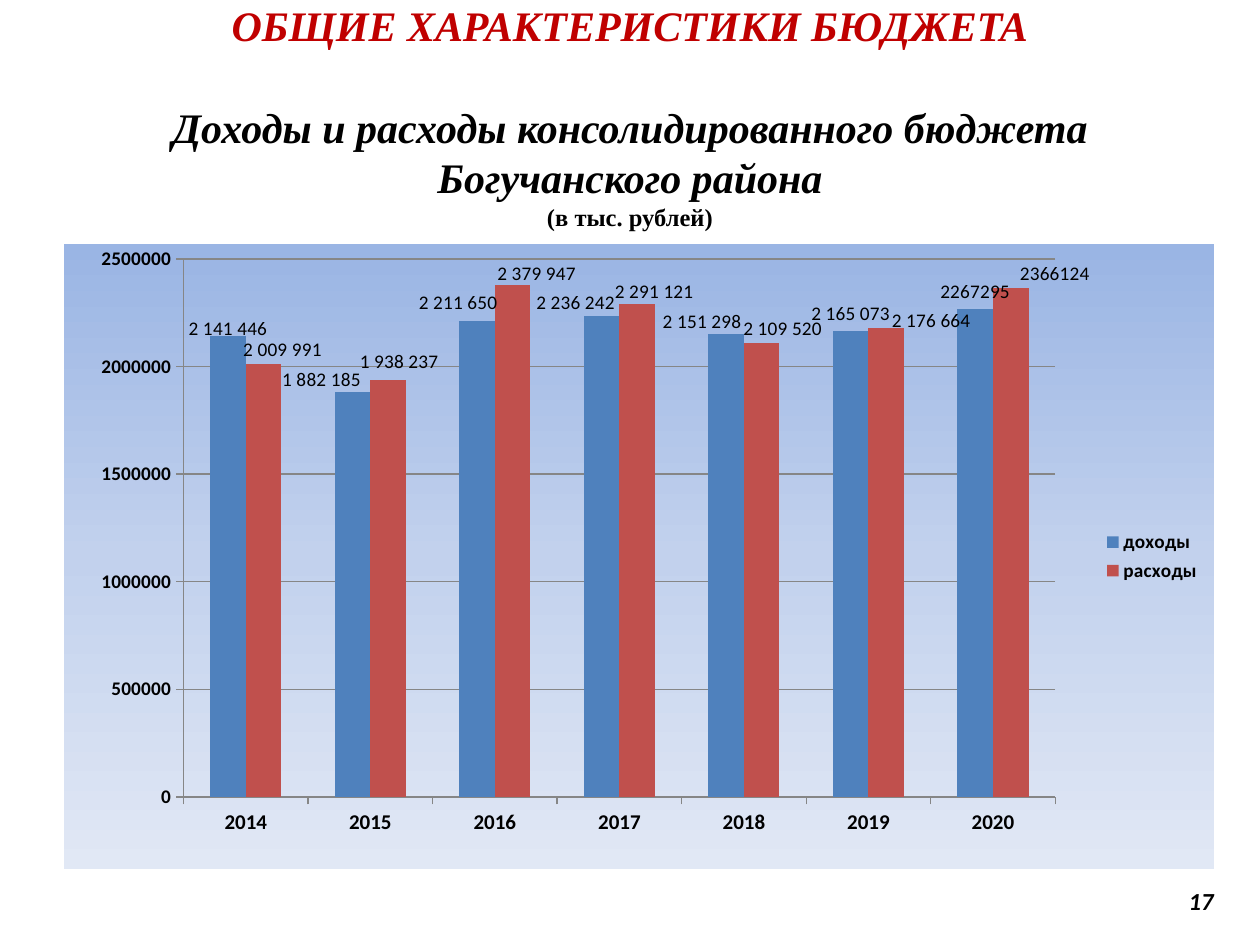
from lxml import etree
from pptx import Presentation
from pptx import util as u
from pptx.chart.data import CategoryChartData
from pptx.dml.color import RGBColor
from pptx.enum import chart as ch, text as tx
from pptx.oxml import parse_xml
from pptx.oxml.ns import nsdecls, qn

PX_PER_INCH = 126
YEARS = [str(year) for year in range(2014, 2021)]
# name, colour, values, label shifts in px
BUDGET = [
    ("доходы", "4F81BD",
     [2141446, 1882185, 2211650, 2236242, 2151298, 2165073, 2267295],
     [(0, 10), (-31, 5), (-19, -1), (-26, 4), (-24, 5), (0, 0), (0, 0)]),
    ("расходы", "C0504D",
     [2009991, 1938237, 2379947, 2291121, 2109520, 2176664, 2366124],
     [(19, 2), (11, -1), (24, 6), (17, 5), (21, 3), (45, 9), (44, 3)]),
]


def px(length):
    return u.Emu(round(length * 914400 / PX_PER_INCH))


def colour(hex_value):
    return RGBColor.from_string(hex_value)


def style(font, size, face="Calibri", hex_value="000000", bold=False, italic=False):
    font.size, font.name = u.Pt(size), face
    font.bold, font.italic = bold, italic
    font.color.rgb = colour(hex_value)


def add_frame(slide, box, anchor):
    frame = slide.shapes.add_textbox(*map(px, box)).text_frame
    frame.word_wrap = True
    frame.vertical_anchor = anchor
    return frame


def add_heading(slide, box):
    frame = add_frame(slide, box, tx.MSO_ANCHOR.TOP)
    frame.margin_top = px(-box[1])  # text begins at the slide's upper edge
    lines = [
        ("ОБЩИЕ ХАРАКТЕРИСТИКИ БЮДЖЕТА", 24, "C00000", True, 0),
        ("Доходы и расходы консолидированного бюджета", 24, "000000", True, 29),
        ("Богучанского района", 24, "000000", True, 0),
        ("(в тыс. рублей)", 14, "000000", False, 0),
    ]
    for index, (words, size, hex_value, italic, gap) in enumerate(lines):
        line = frame.paragraphs[0] if index == 0 else frame.add_paragraph()
        line.alignment = tx.PP_ALIGN.CENTER
        line.space_before = u.Pt(gap)
        run = line.add_run()
        run.text = words
        style(run.font, size, "Times New Roman", hex_value, True, italic)


def add_page_number(slide, box):
    line = add_frame(slide, box, tx.MSO_ANCHOR.MIDDLE).paragraphs[0]
    line.alignment = tx.PP_ALIGN.RIGHT
    run = line.add_run()
    run.text = "17"
    style(run.font, 14, bold=True, italic=True)


def manual_layout(x, y, extra=""):
    return parse_xml(
        f'<c:layout {nsdecls("c")}><c:manualLayout>{extra}'
        f'<c:x val="{x:.4f}"/><c:y val="{y:.4f}"/></c:manualLayout></c:layout>')


def set_plot_area(chart, x, y, width, height):
    area = chart._chartSpace.chart.plotArea
    for old in area.findall(qn("c:layout")):
        area.remove(old)
    layout = manual_layout(x, y, '<c:layoutTarget val="inner"/>'
                                 '<c:xMode val="edge"/><c:yMode val="edge"/>')
    for tag, value in (("c:w", width), ("c:h", height)):
        etree.SubElement(layout[0], qn(tag)).set("val", str(value))
    area.insert(0, layout)


def set_background(chart, stops):
    colours = "".join(f'<a:gs pos="{pos * 1000}"><a:srgbClr val="{hex_value}"/></a:gs>'
                      for pos, hex_value in stops)
    chart._chartSpace.chart.addnext(parse_xml(
        f'<c:spPr {nsdecls("c", "a")}><a:gradFill><a:gsLst>{colours}</a:gsLst>'
        '<a:lin ang="5400000" scaled="0"/></a:gradFill><a:ln><a:noFill/></a:ln></c:spPr>'))


def label_bars(series, values, shifts, width, height):
    labels = series.data_labels
    labels.show_value = True
    labels.position = ch.XL_LABEL_POSITION.OUTSIDE_END
    style(labels.font, 11)
    for index, (value, (dx, dy)) in enumerate(zip(values, shifts)):
        label = series.points[index].data_label
        if index < len(values) - 1:
            run = label.text_frame.paragraphs[0].add_run()
            run.text = f"{value:,}".replace(",", " ")
            style(run.font, 11)
        else:
            style(label.font, 11)  # the last year keeps the plain value
        label.position = ch.XL_LABEL_POSITION.OUTSIDE_END
    for item, (dx, dy) in zip(series._element.iter(qn("c:dLbl")), shifts):
        item.find(qn("c:idx")).addnext(manual_layout(dx / width, dy / height))


def add_budget_chart(slide, box):
    data = CategoryChartData(number_format="General")
    data.categories = YEARS
    for name, _, values, _ in BUDGET:
        data.add_series(name, values)
    chart = slide.shapes.add_chart(
        ch.XL_CHART_TYPE.COLUMN_CLUSTERED, *map(px, box), data).chart
    chart.has_title = False
    style(chart.font, 18)
    set_background(chart, [(0, "9AB5E4"), (50, "C2D1ED"), (100, "E1E8F5")])
    set_plot_area(chart, 0.104, 0.024, 0.758, 0.861)

    # Columns and their values
    plot = chart.plots[0]
    plot.vary_by_categories = False
    plot.gap_width, plot.overlap = 150, 0
    for series, (_, hex_value, values, shifts) in zip(plot.series, BUDGET):
        series.format.fill.solid()
        series.format.fill.fore_color.rgb = colour(hex_value)
        label_bars(series, values, shifts, *box[2:])

    # Axes and grid
    amounts = chart.value_axis
    amounts.minimum_scale, amounts.maximum_scale = 0, 2500000
    amounts.major_unit = 500000
    amounts.has_major_gridlines = True
    for axis, size in ((chart.category_axis, 12), (amounts, 11)):
        axis.major_tick_mark = ch.XL_TICK_MARK.OUTSIDE
        style(axis.tick_labels.font, size, bold=True)
    for part in (chart.category_axis, amounts, amounts.major_gridlines):
        part.format.line.color.rgb = colour("868686")
        part.format.line.width = u.Pt(0.75)

    # Legend
    chart.has_legend = True
    chart.legend.position = ch.XL_LEGEND_POSITION.RIGHT
    chart.legend.include_in_layout = False
    style(chart.legend.font, 11, bold=True)


def main():
    deck = Presentation()
    deck.slide_width, deck.slide_height = px(1260), px(945)
    slide = deck.slides.add_slide(deck.slide_layouts[6])
    add_heading(slide, (0, -68, 1260, 305))
    add_page_number(slide, (903, 876, 323, 50))
    add_budget_chart(slide, (64, 244, 1150, 625))
    deck.save("out.pptx")


if __name__ == "__main__":
    main()
